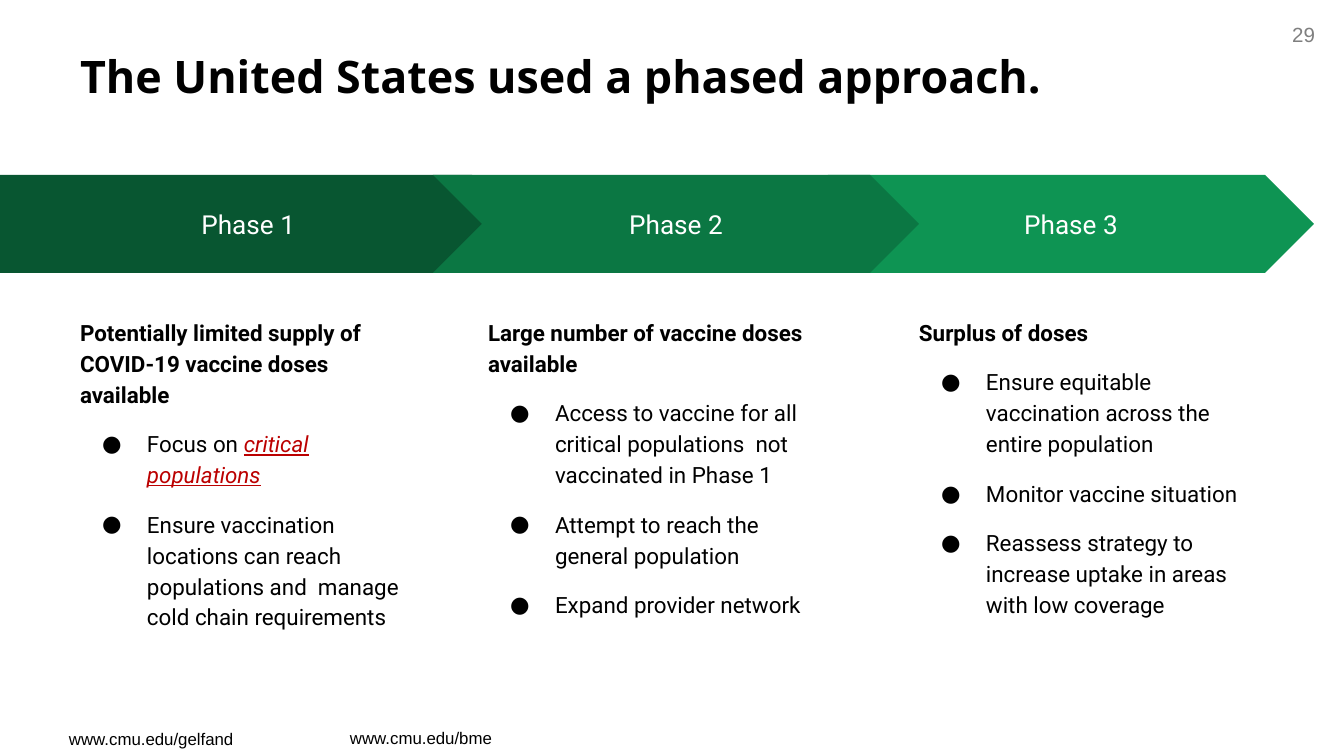
from lxml import etree
from pptx import Presentation
from pptx import util as u
from pptx.dml.color import RGBColor
from pptx.enum import shapes, text
from pptx.oxml.ns import qn

SCALE = 914400 / 134.4  # EMU in one px
WIDE, HIGH = 1344, 756
BLACK, WHITE, RED, GREY = "000000", "FFFFFF", "BB0000", "7F7F7F"
LEFT, RIGHT, MID = text.PP_ALIGN.LEFT, text.PP_ALIGN.RIGHT, text.PP_ALIGN.CENTER
PLATE, CHEVRON = shapes.MSO_SHAPE.PENTAGON, shapes.MSO_SHAPE.CHEVRON

TITLE = "The United States used a phased approach."
LABELS = [
    ("29", (1254, 15, 74, 39), dict(size=11, color=GREY, align=RIGHT)),
    ("www.cmu.edu/gelfand", (56, 722, 194, 34), dict(size=9)),
    ("www.cmu.edu/bme", (337, 721, 194, 34), dict(size=9)),
]
# name, outline, left, width, fill; from back to front
ARROWS = [
    ("Phase 3", CHEVRON, 828, 486, "0E9453"),
    ("Phase 1", PLATE, 0, 521, "085631"),
    ("Phase 2", CHEVRON, 433, 486, "0B7743"),
]
# left, heading, bullets; a tuple holds plain words, then marked words
COLUMNS = [
    (67, "Potentially limited supply of COVID-19 vaccine doses available", [
        ("Focus on ", "critical populations"),
        "Ensure vaccination locations can reach populations and  manage cold chain requirements",
    ]),
    (475, "Large number of vaccine doses available", [
        "Access to vaccine for all critical populations  not vaccinated in Phase 1",
        "Attempt to reach the general population",
        "Expand provider network",
    ]),
    (906, "Surplus of doses", [
        "Ensure equitable vaccination across the entire population",
        "Monitor vaccine situation",
        "Reassess strategy to increase uptake in areas with low coverage",
    ]),
]


def px(n):
    return u.Emu(round(n * SCALE))


def rgb(code):
    return RGBColor.from_string(code)


def place(shape, box):
    shape.left, shape.top, shape.width, shape.height = map(px, box)


def frame(shape, pad=7, anchor=text.MSO_ANCHOR.TOP):
    """Set up the text frame of a shape, with px insets, and return it."""
    tf = shape.text_frame
    tf.word_wrap = True
    tf.auto_size = text.MSO_AUTO_SIZE.NONE
    tf.vertical_anchor = anchor
    tf.margin_left = tf.margin_right = px(13)
    tf.margin_top = tf.margin_bottom = px(pad)
    return tf


def write(para, words, size=12, color=BLACK, face="Arial", bold=False,
          mark=False, align=LEFT, line=1, before=0, after=0):
    para.alignment, para.line_spacing = align, line
    para.space_before, para.space_after = u.Pt(before), u.Pt(after)
    run = para.add_run()
    run.text = words
    font = run.font
    font.name, font.size, font.bold = face, u.Pt(size), bold
    font.color.rgb = rgb(color)
    if mark:
        font.italic = font.underline = True


def bullet(para, char=None):
    """Give a paragraph a hanging bullet, or none."""
    props = para._p.get_or_add_pPr()
    props.set("marL", str(px(67) if char else 0))
    props.set("indent", str(px(-45) if char else 0))
    if not char:
        etree.SubElement(props, qn("a:buNone"))
        return
    tint = etree.SubElement(props, qn("a:buClr"))
    etree.SubElement(tint, qn("a:srgbClr"), val=BLACK)
    etree.SubElement(props, qn("a:buFont"), typeface="Roboto")
    etree.SubElement(props, qn("a:buChar"), char=char)


def fill(body, left, head, items):
    """Write one column: a bold heading over its bullets."""
    place(body, (left, 302, 358, 384))
    tf = frame(body, 13)
    base = dict(face="Roboto", line=1.15)
    bullet(tf.paragraphs[0])
    write(tf.paragraphs[0], head, bold=True, **base)
    for item in items:
        para = tf.add_paragraph()
        bullet(para, "●")
        gaps = dict(before=10, after=10 if item is items[-1] else 0)
        plain, marked = item if isinstance(item, tuple) else (item, "")
        write(para, plain, **base, **gaps)
        if marked:
            write(para, marked, color=RED, mark=True, **base, **gaps)


def main():
    deck = Presentation()
    deck.slide_width, deck.slide_height = px(WIDE), px(HIGH)
    slide = deck.slides.add_slide(deck.slide_layouts[4])
    title, *bodies = slide.placeholders

    place(title, (67, 42, 1210, 67))
    write(frame(title).paragraphs[0], TITLE, size=24, face="Open Sans", bold=True)

    for body, column in zip(bodies, COLUMNS):
        fill(body, *column)
    for spare in bodies[len(COLUMNS):]:
        spare.element.getparent().remove(spare.element)

    for words, box, style in LABELS:
        label = slide.shapes.add_textbox(*map(px, box))
        write(frame(label).paragraphs[0], words, **style)

    for name, kind, left, width, color in ARROWS:
        arrow = slide.shapes.add_shape(kind, *map(px, (left, 175, width, 98)))
        arrow.shadow.inherit = False
        arrow.fill.solid()
        arrow.fill.fore_color.rgb = rgb(color)
        arrow.line.fill.background()
        tf = frame(arrow, 13, text.MSO_ANCHOR.MIDDLE)
        write(tf.paragraphs[0], name, size=14, color=WHITE, face="Roboto", align=MID)

    deck.save("out.pptx")


if __name__ == "__main__":
    main()
